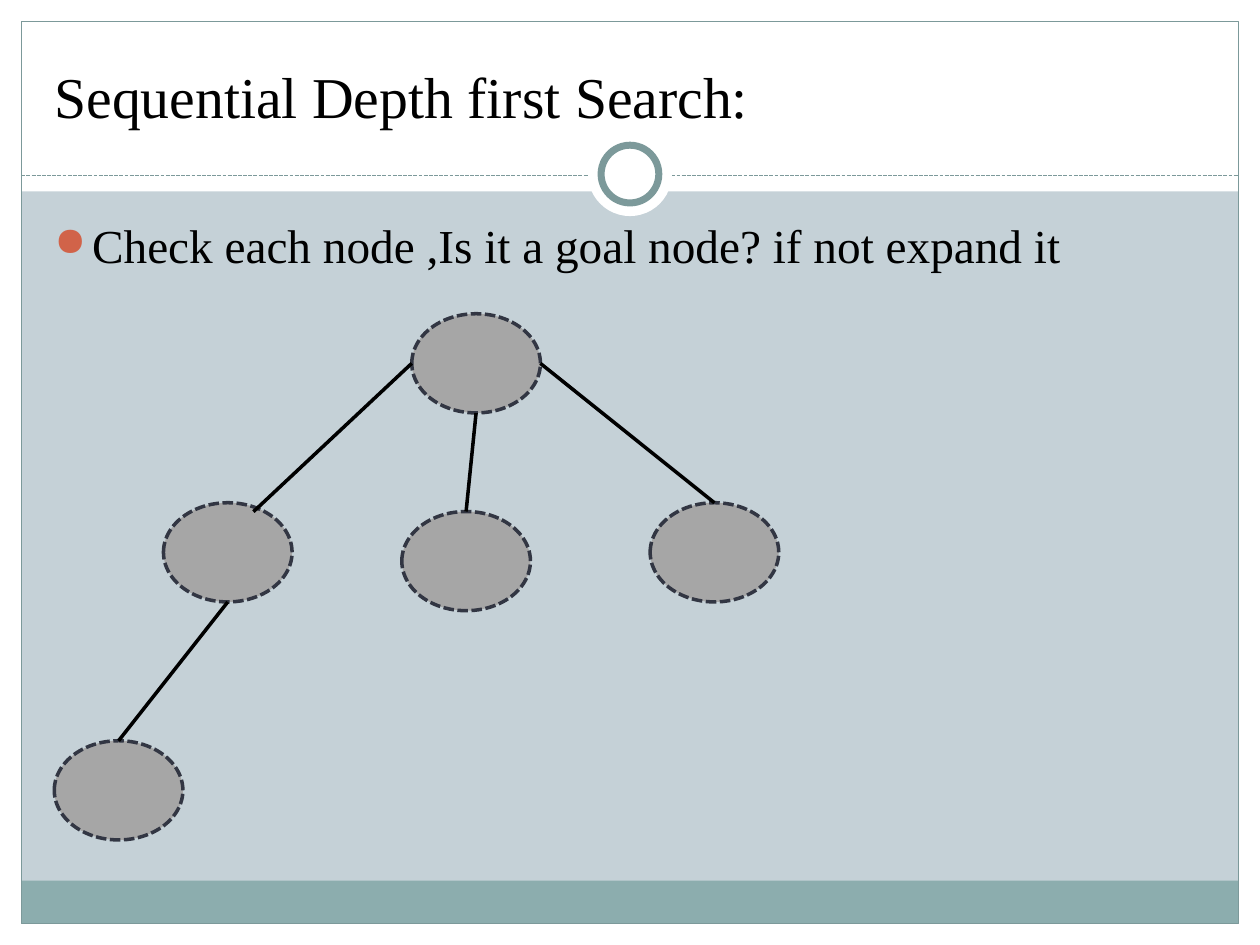
from pptx import Presentation
from pptx.util import Pt
from pptx.dml.color import RGBColor
from pptx.enum import dml, shapes, text
from pptx.oxml.xmlchemy import OxmlElement

INK = {"back": "C5D1D7", "white": "FFFFFF", "bar": "8CADAE", "rim": "7C999A",
       "node": "A6A6A6", "edge": "323643", "black": "000000", "dot": "D16349"}
FONT = "Times New Roman"
DASH = dml.MSO_LINE.SQUARE_DOT
RECT = shapes.MSO_SHAPE.RECTANGLE
OVAL = shapes.MSO_SHAPE.OVAL


def rgb(name):
    return RGBColor.from_string(INK[name])


def stroke(line, color, width, dash=None):
    line.color.rgb = rgb(color)
    line.width = Pt(width)
    if dash:
        line.dash_style = dash


def form(slide, kind, box, fill=None, line=None):
    item = slide.shapes.add_shape(kind, *map(Pt, box))
    item.shadow.inherit = False
    if fill:
        item.fill.solid()
        item.fill.fore_color.rgb = rgb(fill)
    else:
        item.fill.background()
    if line:
        stroke(item.line, *line)
    else:
        item.line.fill.background()


def link(slide, start, end, *line):
    item = slide.shapes.add_connector(
        shapes.MSO_CONNECTOR.STRAIGHT, *map(Pt, (*start, *end)))
    item._element.spPr.append(OxmlElement("a:effectLst"))
    stroke(item.line, *line)


def words(slide, box, copy, size, anchor):
    frame = slide.shapes.add_textbox(*map(Pt, box)).text_frame
    frame.word_wrap = True
    frame.vertical_anchor = anchor
    para = frame.paragraphs[0]
    para.text = copy
    font = para.runs[0].font
    font.name, font.size = FONT, Pt(size)
    font.color.rgb = rgb("black")
    return para


def bullet(para, indent):
    props = para._p.get_or_add_pPr()
    props.set("marL", str(Pt(indent)))
    props.set("indent", str(-Pt(indent)))
    color = OxmlElement("a:buClr")
    tint = OxmlElement("a:srgbClr")
    tint.set("val", INK["dot"])
    color.append(tint)
    size = OxmlElement("a:buSzPct")
    size.set("val", "85000")
    mark = OxmlElement("a:buChar")
    mark.set("char", "●")
    for part in (color, size, mark):
        props.append(part)


def border(slide, box):
    x, y, w, h = box
    gap, head, foot = 12.2, 109.4, 24.5
    for band in ((x, y + h - gap, w, gap), (x, y, w, head),
                 (x, y, gap, h), (x + w - gap, y, gap, h)):
        form(slide, RECT, band, "white")
    wide = w - 2 * gap
    form(slide, RECT, (x + gap, y + h - gap - foot, wide, foot), "bar")
    form(slide, RECT, (x + gap, y + gap, wide, h - 2 * gap),
         line=("rim", 0.75))
    rule = y + 100.5
    link(slide, (x + gap, rule), (x + w - gap, rule), "rim", 0.75, DASH)
    mid, core = x + w / 2, y + 99.5
    for size, line in ((48, None), (33, ("rim", 4))):
        form(slide, OVAL, (mid - size / 2, core - size / 2, size, size),
             "white", line)


def tree(slide, box):
    x, y, w, h = box
    wide, high = 73.5, 56.7
    nodes = {"root": (204.3, 0), "right": (w - wide, 108), "left": (62.4, 108),
             "mid": (198.6, 113), "leaf": (0, h - high)}
    sides = {"top": (0.5, 0), "bottom": (0.5, 1), "west": (0, 0.5),
             "east": (1, 0.5), "slant": (0.7, 0.09)}
    links = (("root", "west", "left", "slant"), ("root", "bottom", "mid", "top"),
             ("root", "east", "right", "top"), ("left", "bottom", "leaf", "top"))

    def spot(node, side):
        (left, top), (across, down) = nodes[node], sides[side]
        return x + left + across * wide, y + top + down * high

    for left, top in nodes.values():
        form(slide, OVAL, (x + left, y + top, wide, high), "node",
             ("edge", 2, DASH))
    for start, out, end, into in links:
        link(slide, spot(start, out), spot(end, into), "black", 2)


def main():
    deck = Presentation()
    deck.slide_width, deck.slide_height = Pt(720), Pt(540)
    slide = deck.slides.add_slide(deck.slide_layouts[6])
    slide.background.fill.solid()
    slide.background.fill.fore_color.rgb = rgb("back")
    border(slide, (0, 0, 720, 540))
    words(slide, (24, 18, 672, 60), "Sequential Depth first Search:", 33,
          text.MSO_ANCHOR.BOTTOM)
    body = words(slide, (24, 120, 670, 360),
                 "Check each node ,Is it a goal node? if not expand it", 27,
                 text.MSO_ANCHOR.TOP)
    bullet(body, 21.6)
    tree(slide, (31, 179.3, 414, 300.7))
    deck.save("out.pptx")


if __name__ == "__main__":
    main()
